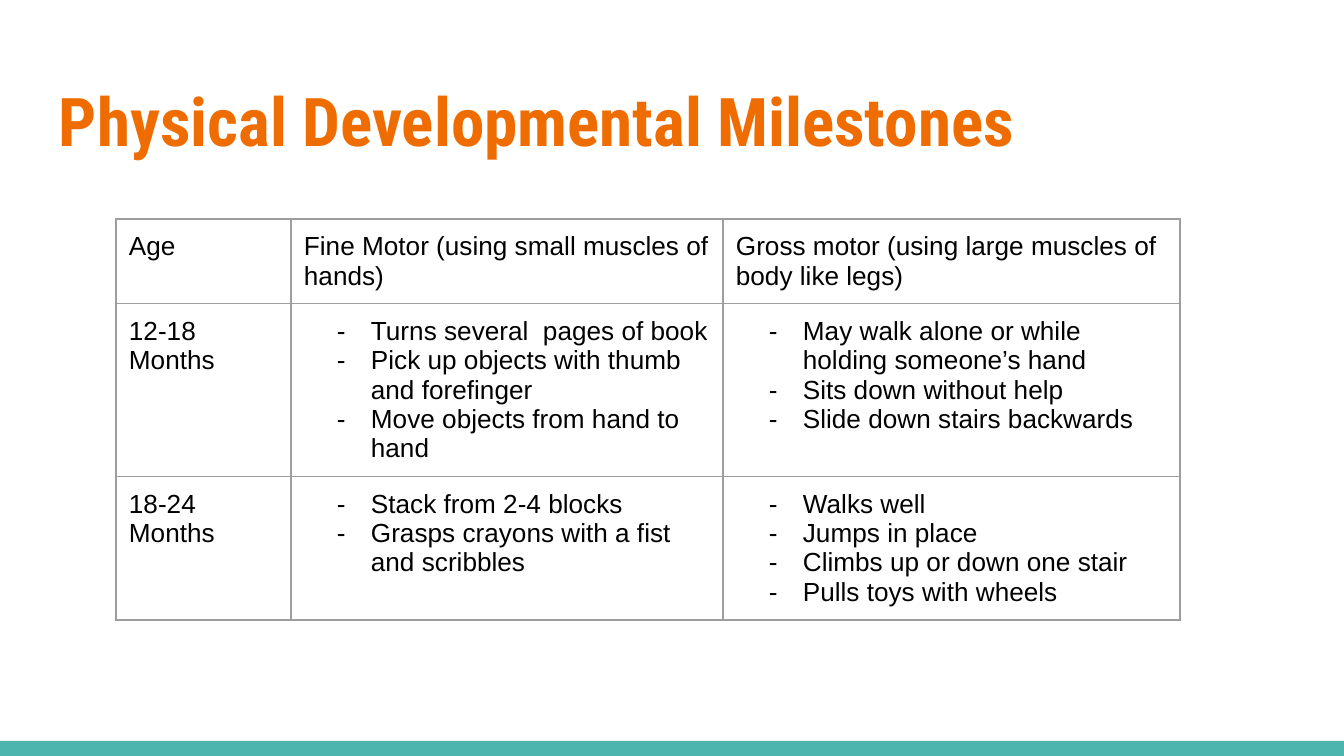
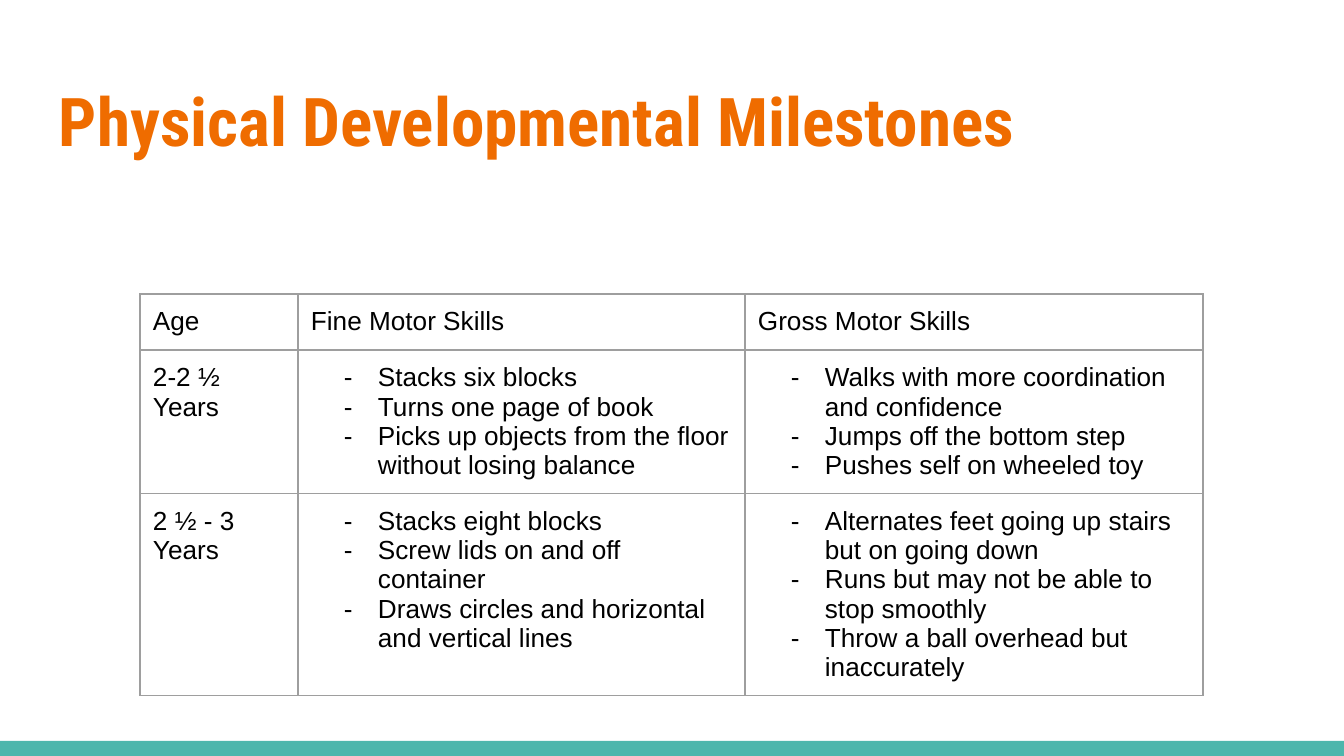
import lxml.etree
import pptx
import pptx.dml.color
import pptx.enum.shapes
import pptx.enum.text
import pptx.oxml.ns
import pptx.util

TITLE = "Physical Developmental Milestones"
TABLES = [
    {
        "corner": (116, 219),
        "columns": (175, 432, 457),
        "rows": [
            ("Age", "Fine Motor (using small muscles of hands)",
             "Gross motor (using large muscles of body like legs)"),
            ("12-18 Months",
             ["Turns several  pages of book",
              "Pick up objects with thumb and forefinger",
              "Move objects from hand to hand"],
             ["May walk alone or while holding someone’s hand",
              "Sits down without help",
              "Slide down stairs backwards"]),
            ("18-24 Months",
             ["Stack from 2-4 blocks",
              "Grasps crayons with a fist and scribbles"],
             ["Walks well",
              "Jumps in place",
              "Climbs up or down one stair",
              "Pulls toys with wheels"]),
        ],
    },
    {
        "corner": (140, 294),
        "columns": (158, 447, 458),
        "rows": [
            ("Age", "Fine Motor Skills", "Gross Motor Skills"),
            ("2-2 ½ Years",
             ["Stacks six blocks",
              "Turns one page of book",
              "Picks up objects from the floor without losing balance"],
             ["Walks with more coordination and confidence",
              "Jumps off the bottom step",
              "Pushes self on wheeled toy"]),
            ("2 ½ - 3 Years",
             ["Stacks eight blocks",
              "Screw lids on and off container",
              "Draws circles and horizontal and vertical lines"],
             ["Alternates feet going up stairs but on going down",
              "Runs but may not be able to stop smoothly",
              "Throw a ball overhead but inaccurately"]),
        ],
    },
]

COLORS = {"title": "EF6C00", "text": "000000", "band": "4DB6AC",
          "border": "9E9E9E", "page": "FFFFFF"}
PAGE_WIDTH, PAGE_HEIGHT = 1344, 756
BAND_HEIGHT = 15
TITLE_BOX = (46, 66, 1252, 103)
INSET = 13
ROW_HEIGHT = 56
LIST_INDENT, DASH_INDENT = 67, -34
TITLE_FONT = {"name": "Roboto Condensed", "size": pptx.util.Pt(36), "bold": True}
TEXT_FONT = {"name": "Arial", "size": pptx.util.Pt(14), "bold": False}


def px(length):
    return pptx.util.Emu(round(length * 914400 / 134.4))


def color(name):
    return pptx.dml.color.RGBColor.from_string(COLORS[name])


def set_all(target, values):
    for name, value in values.items():
        setattr(target, name, value)


def add_span(para, text, font, color_name):
    span = para.add_run()
    span.text = text
    set_all(span.font, font)
    span.font.color.rgb = color(color_name)


def add_child(parent, tag, **attributes):
    return lxml.etree.SubElement(parent, pptx.oxml.ns.qn(tag), attributes)


def add_dash(para):
    properties = para._p.get_or_add_pPr()
    properties.set("marL", str(px(LIST_INDENT)))
    properties.set("indent", str(px(DASH_INDENT)))
    add_child(properties, "a:buFont", typeface="Arial")
    add_child(properties, "a:buChar", char="-")


def add_borders(cell):
    properties = cell._tc.get_or_add_tcPr()
    for position, side in enumerate(("a:lnL", "a:lnR", "a:lnT", "a:lnB")):
        line = add_child(properties, side, w=str(pptx.util.Pt(0.75)))
        add_child(add_child(line, "a:solidFill"), "a:srgbClr", val=COLORS["border"])
        properties.insert(position, line)


def fill_cell(cell, content):
    cell.fill.background()
    set_all(cell, dict.fromkeys(
        ("margin_left", "margin_right", "margin_top", "margin_bottom"), px(INSET)))
    add_borders(cell)
    is_list = isinstance(content, list)
    frame = cell.text_frame
    for position, text in enumerate(content if is_list else [content]):
        para = frame.add_paragraph() if position else frame.paragraphs[0]
        if is_list:
            add_dash(para)
        add_span(para, text, TEXT_FONT, "text")


def add_title(page):
    box = page.shapes.title
    set_all(box, dict(zip(("left", "top", "width", "height"), map(px, TITLE_BOX))))
    frame = box.text_frame
    set_all(frame, dict.fromkeys(
        ("margin_left", "margin_right", "margin_top", "margin_bottom"), px(INSET)))
    set_all(frame, {"word_wrap": True,
                    "auto_size": pptx.enum.text.MSO_AUTO_SIZE.NONE,
                    "vertical_anchor": pptx.enum.text.MSO_ANCHOR.TOP})
    para = frame.paragraphs[0]
    para.alignment = pptx.enum.text.PP_ALIGN.LEFT
    add_span(para, TITLE, TITLE_FONT, "title")


def add_table(page, corner, columns, rows):
    left, top = corner
    table = page.shapes.add_table(
        len(rows), len(columns), px(left), px(top),
        px(sum(columns)), px(ROW_HEIGHT * len(rows))).table
    set_all(table, {"first_row": False, "horz_banding": False})
    for column, width in zip(table.columns, columns):
        column.width = px(width)
    for row, contents in zip(table.rows, rows):
        row.height = px(ROW_HEIGHT)
        for cell, content in zip(row.cells, contents):
            fill_cell(cell, content)


def add_band(page):
    band = page.shapes.add_shape(
        pptx.enum.shapes.MSO_SHAPE.RECTANGLE, 0, px(PAGE_HEIGHT - BAND_HEIGHT),
        px(PAGE_WIDTH), px(BAND_HEIGHT))
    band.shadow.inherit = False
    band.fill.solid()
    band.fill.fore_color.rgb = color("band")
    band.line.fill.background()
    return band


def main():
    deck = pptx.Presentation()
    deck.slide_width, deck.slide_height = px(PAGE_WIDTH), px(PAGE_HEIGHT)
    layout = deck.slide_layouts.get_by_name("Title Only")
    layout.background.fill.solid()
    layout.background.fill.fore_color.rgb = color("page")
    pages = [deck.slides.add_slide(layout) for _ in TABLES]
    layout.shapes.element.append(add_band(pages[0]).element)
    for page, milestones in zip(pages, TABLES):
        add_title(page)
        add_table(page, **milestones)
    deck.save("out.pptx")


if __name__ == "__main__":
    main()
